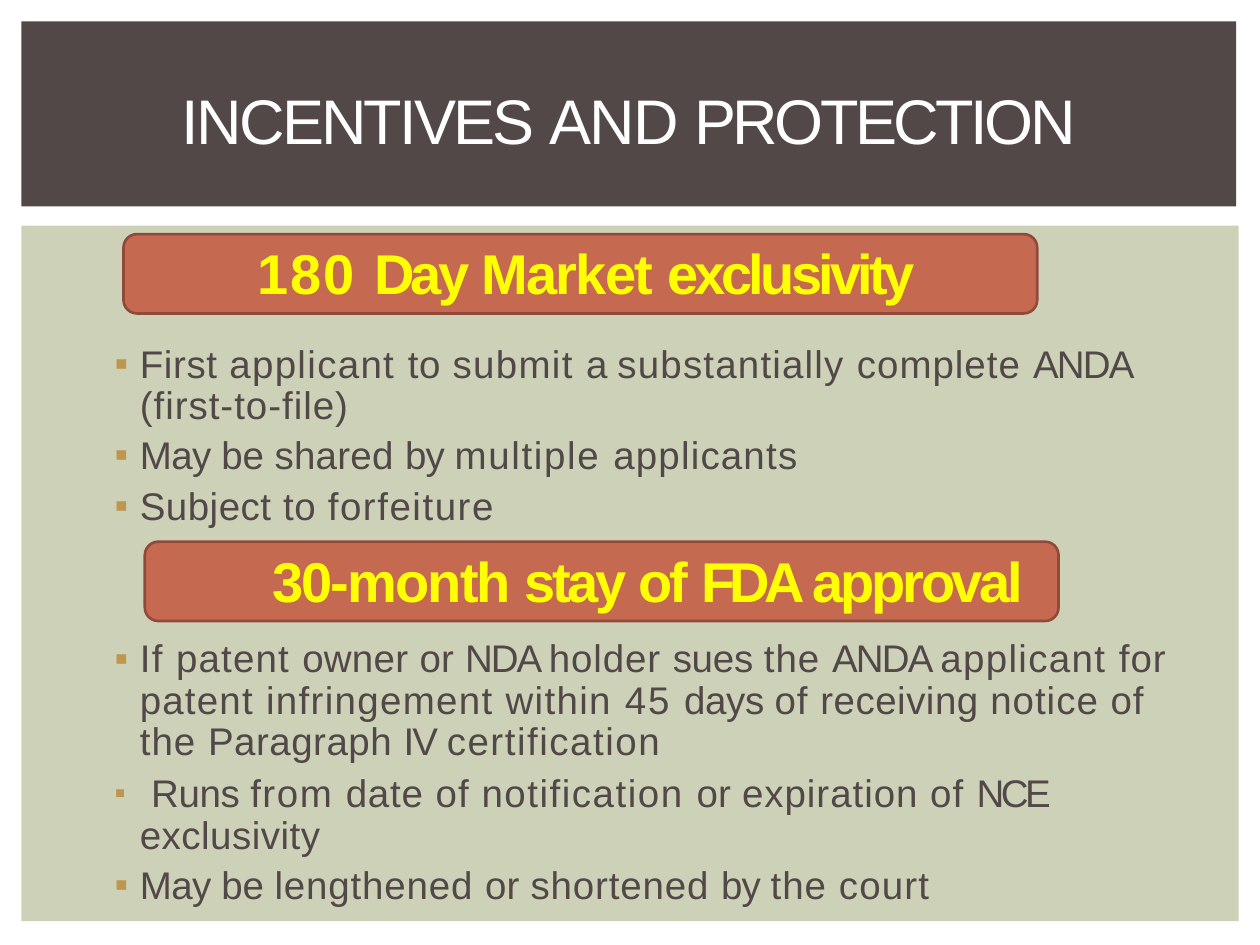
import pptx
import pptx.util
import pptx.dml.color
import pptx.enum.shapes
import pptx.enum.text
from lxml import etree

Cm, Pt = pptx.util.Cm, pptx.util.Pt
RGBColor = pptx.dml.color.RGBColor
Kind = pptx.enum.shapes.MSO_SHAPE
Align = pptx.enum.text.PP_ALIGN

BROWN = RGBColor(0x52, 0x48, 0x48)
SAGE = RGBColor(0xCC, 0xD1, 0xB8)
RUST = RGBColor(0xC5, 0x69, 0x51)
EDGE = RGBColor(0x91, 0x4A, 0x39)
GOLD = RGBColor(0xBE, 0x96, 0x4D)
YELLOW = RGBColor(0xFF, 0xFF, 0x00)
WHITE = RGBColor(0xFF, 0xFF, 0xFF)
NS = "http://schemas.openxmlformats.org/drawingml/2006/main"


def fill_para(para, runs, size, color, bold=False):
    """Add (text, letter spacing in points) runs under one paragraph font."""
    font = para.font
    font.name, font.size, font.bold = "Arial", Pt(size), bold
    font.color.rgb = color
    for text, gap in runs:
        run = para.add_run()
        run.text = text
        run._r.get_or_add_rPr().set("spc", str(round(gap * 100)))


def add_bullet(para, tab):
    props = para._p.get_or_add_pPr()
    props.set("marL", str(Cm(0.53)))
    props.set("indent", str(Cm(-0.51)))
    color = etree.SubElement(props, f"{{{NS}}}buClr")
    etree.SubElement(color, f"{{{NS}}}srgbClr", val=str(GOLD))
    etree.SubElement(props, f"{{{NS}}}buFont", typeface="Arial")
    etree.SubElement(props, f"{{{NS}}}buChar", char="▪")
    tabs = etree.SubElement(props, f"{{{NS}}}tabLst")
    etree.SubElement(tabs, f"{{{NS}}}tab", pos=str(Cm(tab)), algn="l")


deck = pptx.Presentation()
deck.slide_width, deck.slide_height = Cm(25.4), Cm(19.05)
slide = deck.slides.add_slide(deck.slide_layouts[5])
shapes = slide.shapes

# Title band
title = shapes.title
title.left, title.top, title.width, title.height = Cm(0.43), Cm(0.43), Cm(24.49), Cm(3.73)
title.fill.solid()
title.fill.fore_color.rgb = BROWN
frame = title.text_frame
frame.auto_size = pptx.enum.text.MSO_AUTO_SIZE.NONE
frame.vertical_anchor = pptx.enum.text.MSO_ANCHOR.TOP
frame.margin_left = frame.margin_right = frame.margin_bottom = 0
frame.margin_top = Cm(1.22)
para = frame.paragraphs[0]
para.alignment = Align.CENTER
fill_para(para, [("INCENTIVES ", -1.6), ("AND ", -1.1), ("PROTECTION", -2)], 36, WHITE)

# Body panel and heading plates
panel = shapes.add_shape(Kind.RECTANGLE, Cm(0.43), Cm(4.55), Cm(24.54), Cm(14.02))
panel.shadow.inherit = False
panel.fill.solid()
panel.fill.fore_color.rgb = SAGE
panel.line.fill.background()

for left, top in ((2.49, 4.72), (2.92, 10.92)):
    plate = shapes.add_shape(Kind.ROUNDED_RECTANGLE, Cm(left), Cm(top), Cm(18.42), Cm(1.6))
    plate.adjustments[0] = 0.17
    plate.shadow.inherit = False
    plate.fill.solid()
    plate.fill.fore_color.rgb = RUST
    plate.line.color.rgb = EDGE
    plate.line.width = Pt(1.5)

# Body text: (kind, space before, line spacing, runs)
body = [
    ("first", None, None,
     [("180 ", 1.1), ("Day ", -2.2), ("Market ", -1), ("exclusivity", -2.2)]),
    ("item", 21.9, Pt(23.8),
     [("First ", 0.4), ("applicant ", 0.8), ("to ", 0.4), ("submit ", 0.8), ("a ", -0.4),
      ("substantially ", 0.7), ("complete ", 0.6), ("ANDA ", -1), ("(first-to-file)", 0.6)]),
    ("item", 2.2, None,
     [("May ", -0.3), ("be ", -0.1), ("shared ", 0.2), ("by ", -0.5), ("multiple ", 1),
      ("applicants", 0.7)]),
    ("item", 2.6, None, [("Subject ", 0.3), ("to ", 0.4), ("forfeiture", 0.9)]),
    ("head", 10.3, None,
     [("30-month ", -1.1), ("stay ", -2), ("of ", -1.6), ("FDA ", -3.3), ("approval", -1.9)]),
    ("item", 14.7, 0.9,
     [("If ", 0.8), ("patent ", 0.7), ("owner ", 0.2), ("or ", 0.1), ("NDA ", -1.1),
      ("holder ", 0.5), ("sues ", -0.1), ("the ", 0.6), ("ANDA ", -1), ("applicant ", 0.8),
      ("for ", 0.6), ("patent ", 0.7), ("infringement within ", 0.8), ("45 ", 1.1),
      ("days ", -0.2), ("of ", 0.6), ("receiving ", 0.3), ("notice of the ", 0.6),
      ("Paragraph ", 0.3), ("IV ", -1.1), ("certification", 0.9)]),
    ("tabbed", 5.5, Pt(23.8),
     [("\t", 0), ("Runs ", -0.2), ("from ", 0.9), ("date ", 0.5), ("of ", 0.6),
      ("notification ", 0.9), ("or ", 0.1), ("expiration of ", 0.6), ("NCE ", -2),
      ("exclusivity", 0.3)]),
    ("item", 2.2, None,
     [("May ", -0.3), ("be ", -0.1), ("lengthened ", 0.5), ("or ", 0.1), ("shortened ", 0.5),
      ("by ", -0.5), ("the ", 0.6), ("court", 0.7)]),
]

box = shapes.add_textbox(Cm(2.29), Cm(4.78), Cm(21.54), Cm(13.56))
frame = box.text_frame
frame.word_wrap = True
frame.margin_left = frame.margin_right = frame.margin_bottom = 0
frame.margin_top = Cm(0.03)
for i, (kind, before, lines, runs) in enumerate(body):
    para = frame.add_paragraph() if i else frame.paragraphs[0]
    if before:
        para.space_before = Pt(before)
    if lines:
        para.line_spacing = lines
    if kind in ("first", "head"):
        if kind == "first":
            para._p.get_or_add_pPr().set("marL", str(Cm(2.9)))
        else:
            para.alignment = Align.CENTER
        fill_para(para, runs, 32, YELLOW, True)
    else:
        add_bullet(para, 0.76 if kind == "tabbed" else 0.53)
        fill_para(para, runs, 22, BROWN)
    if kind == "tabbed":
        para.runs[0].font.name = "Calibri"
        para.runs[0].font.size = Pt(18)

deck.save("out.pptx")
